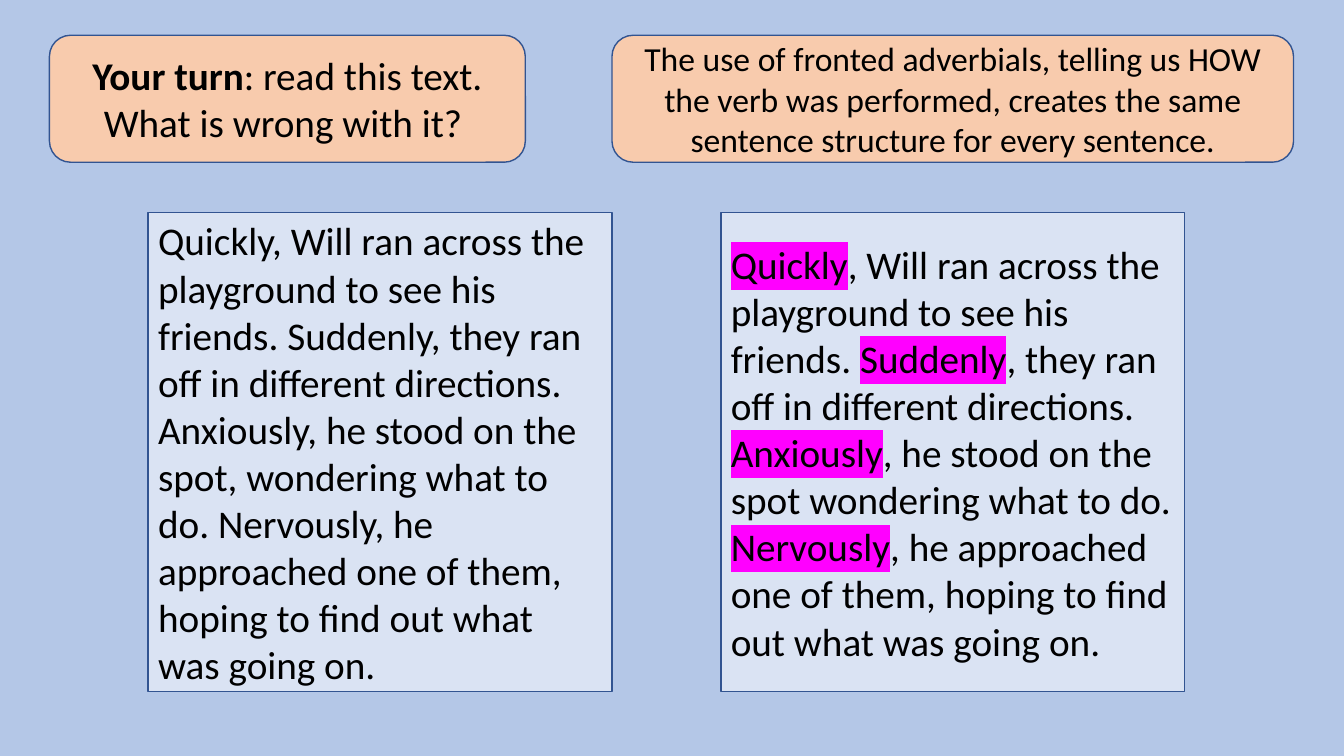
from dataclasses import dataclass
from enum import Enum

from lxml.etree import SubElement
from pptx import Presentation
from pptx.dml.color import RGBColor
from pptx.enum.shapes import MSO_SHAPE
from pptx.enum.text import MSO_ANCHOR, PP_ALIGN
from pptx.oxml.ns import qn
from pptx.slide import Slide
from pptx.text.text import _Paragraph
from pptx.util import Inches, Pt


@dataclass(frozen=True)
class Theme:
    font: str = "Calibri"
    background: str = "B4C7E7"
    heading_fill: str = "F8CBAD"
    passage_fill: str = "DAE3F3"
    outline: str = "325491"
    text: str = "000000"
    highlight: str = "FF00FF"
    body_size: int = 28
    note_size: int = 24
    outline_width: int = 1


THEME = Theme()


class Emphasis(Enum):
    NONE = 0
    BOLD = 1
    HIGHLIGHT = 2


@dataclass(frozen=True)
class Span:
    text: str
    emphasis: Emphasis = Emphasis.NONE


@dataclass(frozen=True)
class Panel:
    shape: MSO_SHAPE
    left: float
    top: float
    width: float
    height: float
    fill: str
    align: PP_ALIGN
    size: int
    spans: tuple[Span, ...]


def heading(left: float, width: float, size: int, *spans: Span) -> Panel:
    return Panel(MSO_SHAPE.ROUNDED_RECTANGLE, left, 0.35, width, 1.26,
                 THEME.heading_fill, PP_ALIGN.CENTER, size, spans)


def passage(left: float, *spans: Span) -> Panel:
    return Panel(MSO_SHAPE.RECTANGLE, left, 2.11, 4.6, 4.75,
                 THEME.passage_fill, PP_ALIGN.LEFT, THEME.body_size, spans)


PANELS = (
    passage(1.47, Span(
        "Quickly, Will ran across the playground to see his friends. "
        "Suddenly, they ran off in different directions. "
        "Anxiously, he stood on the spot, wondering what to do. "
        "Nervously, he approached one of them, hoping to find out what was going on.")),
    heading(0.49, 4.72, THEME.body_size,
            Span("Your turn", Emphasis.BOLD),
            Span(": read this text. What is wrong with it? ")),
    heading(6.07, 6.76, THEME.note_size, Span(
        "The use of fronted adverbials, telling us HOW the verb was performed, "
        "creates the same sentence structure for every sentence.")),
    passage(7.15,
            Span("Quickly", Emphasis.HIGHLIGHT),
            Span(", Will ran across the playground to see his friends. "),
            Span("Suddenly", Emphasis.HIGHLIGHT),
            Span(", they ran off in different directions. "),
            Span("Anxiously", Emphasis.HIGHLIGHT),
            Span(", he stood on the spot wondering what to do. "),
            Span("Nervously", Emphasis.HIGHLIGHT),
            Span(", he approached one of them, hoping to find out what was going on.")),
)


def add_span(paragraph: _Paragraph, span: Span, size: int) -> None:
    run = paragraph.add_run()
    run.text = span.text
    run.font.size = Pt(size)
    run.font.bold = span.emphasis is Emphasis.BOLD
    run.font.color.rgb = RGBColor.from_string(THEME.text)
    if span.emphasis is Emphasis.HIGHLIGHT:
        highlight = SubElement(run.font._element, qn("a:highlight"))
        SubElement(highlight, qn("a:srgbClr"), val=THEME.highlight)
    run.font.name = THEME.font


def add_panel(page: Slide, panel: Panel) -> None:
    box = page.shapes.add_shape(
        panel.shape, Inches(panel.left), Inches(panel.top),
        Inches(panel.width), Inches(panel.height))
    box.shadow.inherit = False
    box.fill.solid()
    box.fill.fore_color.rgb = RGBColor.from_string(panel.fill)
    box.line.color.rgb = RGBColor.from_string(THEME.outline)
    box.line.width = Pt(THEME.outline_width)
    frame = box.text_frame
    frame.word_wrap = True
    frame.vertical_anchor = MSO_ANCHOR.MIDDLE
    paragraph = frame.paragraphs[0]
    paragraph.alignment = panel.align
    for span in panel.spans:
        add_span(paragraph, span, panel.size)


def main() -> None:
    deck = Presentation()
    deck.slide_width = Inches(13.33)
    deck.slide_height = Inches(7.5)
    page = deck.slides.add_slide(deck.slide_layouts[6])
    page.background.fill.solid()
    page.background.fill.fore_color.rgb = RGBColor.from_string(THEME.background)
    for panel in PANELS:
        add_panel(page, panel)
    deck.save("out.pptx")


if __name__ == "__main__":
    main()
